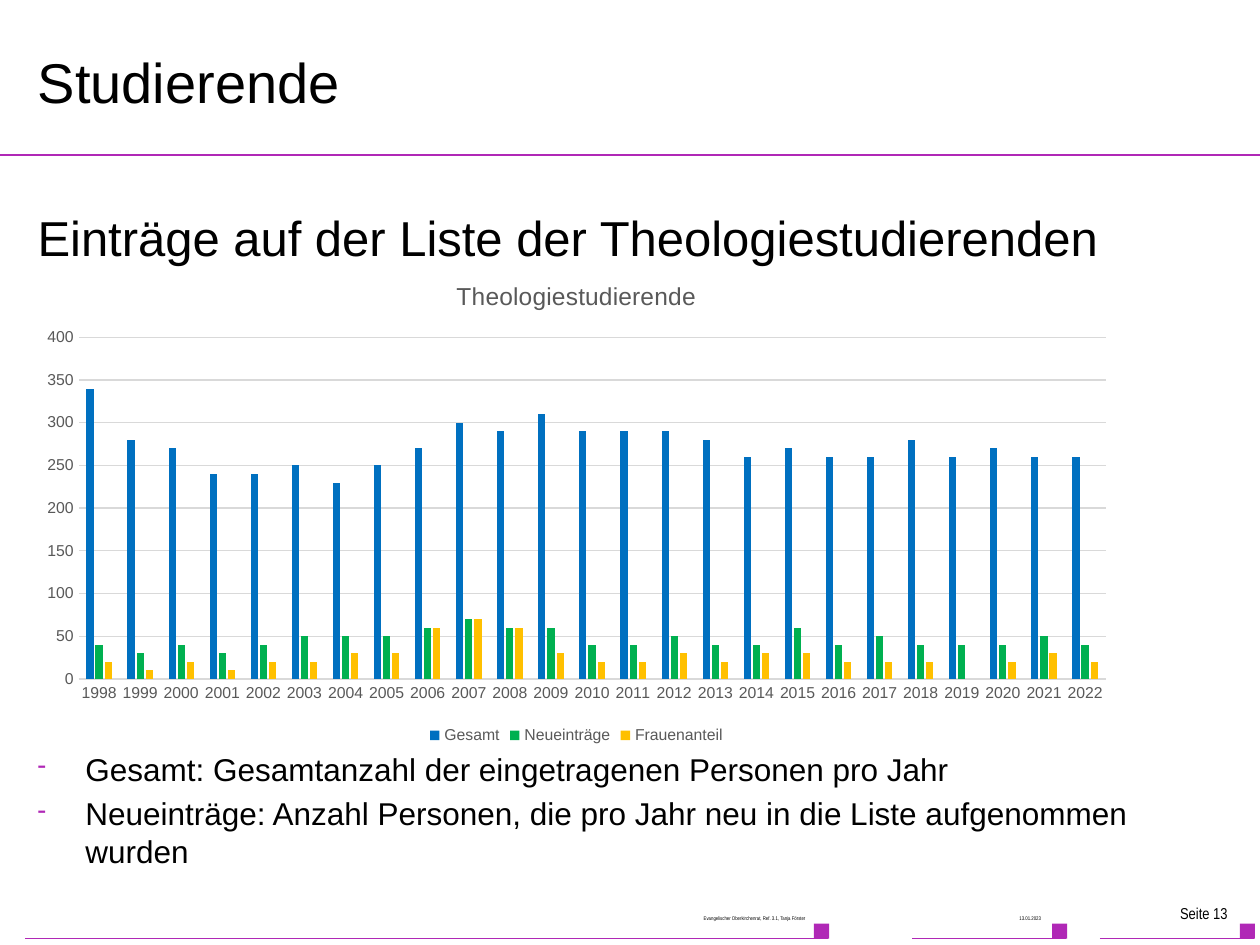
from lxml.etree import SubElement
from pptx import Presentation
from pptx.chart.data import CategoryChartData
from pptx.dml.color import RGBColor
from pptx.enum.chart import XL_CHART_TYPE as ChartType, XL_LEGEND_POSITION as LegendPosition, XL_TICK_MARK as TickMark
from pptx.enum.shapes import MSO_CONNECTOR as Connector, MSO_SHAPE as Shape
from pptx.enum.text import MSO_ANCHOR as Anchor, PP_ALIGN as Align
from pptx.oxml.ns import qn
from pptx.util import Inches, Pt

COLORS = {
    "accent": "B028B6", "text": "000000", "muted": "595959", "grid": "D9D9D9",
    "total": "0070C0", "new": "00B050", "women": "FFC000",
}
YEARS = [str(year) for year in range(1998, 2023)]
SERIES = [
    ("Gesamt", "total", [340, 280, 270, 240, 240, 250, 230, 250, 270, 300, 290, 310, 290,
                         290, 290, 280, 260, 270, 260, 260, 280, 260, 270, 260, 260]),
    ("Neueinträge", "new", [40, 30, 40, 30, 40, 50, 50, 50, 60, 70, 60, 60, 40,
                            40, 50, 40, 40, 60, 40, 50, 40, 40, 40, 50, 40]),
    ("Frauenanteil", "women", [20, 10, 20, 10, 20, 20, 30, 30, 60, 70, 60, 30, 20,
                               20, 30, 20, 30, 30, 20, 20, 20, None, 20, 30, 20]),
]
DEFINITIONS = [
    "Gesamt: Gesamtanzahl der eingetragenen Personen pro Jahr",
    "Neueinträge: Anzahl Personen, die pro Jahr neu in die Liste aufgenommen wurden",
]
FOOTERS = [
    (0.2, 6.57, (0.35, 7.22, 6.14, 0.16), "Evangelischer Oberkirchenrat, Ref. 3.1, Tanja Förster", 3),
    (7.24, 8.46, (6.89, 7.22, 1.47, 0.16), "13.01.2023", 3),
    (8.73, 9.95, (8.62, 7.14, 1.22, 0.24), "Seite 13", 9),
]


def color(name):
    return RGBColor.from_string(COLORS[name])


def inches(area):
    return [Inches(length) for length in area]


class SlideBuilder:
    font = "Arial"
    footer_font = "Arial Narrow"

    def __init__(self, slide):
        self.slide = slide

    def style(self, font, size, name="text", face=None):
        font.name = face or self.font
        font.size = Pt(size)
        font.bold = False
        font.color.rgb = color(name)

    def title(self, area, text):
        title = self.slide.shapes.title
        title.left, title.top, title.width, title.height = inches(area)
        title.text_frame.text = text
        title.text_frame.vertical_anchor = Anchor.MIDDLE
        para = title.text_frame.paragraphs[0]
        para.alignment = Align.LEFT
        self.style(para.font, 32)

    def text(self, area, lines, size, face=None):
        box = self.slide.shapes.add_textbox(*inches(area))
        box.text_frame.word_wrap = True
        box.text_frame.text = "\n".join(lines)
        for para in box.text_frame.paragraphs:
            self.style(para.font, size, face=face)
        return box.text_frame.paragraphs

    def bullets(self, area, lines, size):
        paras = self.text(area, [""] * len(lines), size)
        for index, (para, line) in enumerate(zip(paras, lines)):
            para.text = line
            properties = para._p.get_or_add_pPr()
            properties.set("marL", str(Inches(0.38)))
            properties.set("indent", str(Inches(-0.38)))
            for old in list(properties):
                properties.remove(old)
            tint = SubElement(properties, qn("a:buClr"))
            SubElement(tint, qn("a:srgbClr"), val=COLORS["accent"])
            SubElement(properties, qn("a:buSzPct"), val="80000")
            SubElement(properties, qn("a:buChar"), char="-")
            para.space_before = Pt(4 if index else 0)
            self.style(para.font, size)

    def line(self, left, right, top, width):
        line = self.slide.shapes.add_connector(Connector.STRAIGHT, *inches((left, top, right, top)))
        line.line.color.rgb = color("accent")
        line.line.width = Pt(width)
        SubElement(line._element.spPr, qn("a:effectLst"))

    def square(self, left, top, side):
        square = self.slide.shapes.add_shape(Shape.RECTANGLE, *inches((left, top, side, side)))
        square.shadow.inherit = False
        square.fill.solid()
        square.fill.fore_color.rgb = color("accent")
        square.line.fill.background()

    def footer(self, left, right, area, text, size):
        self.line(left, right, 7.45, 0.75)
        self.square(right - 0.11, 7.33, 0.12)
        para = self.text(area, [text], size, self.footer_font)[0]
        para.alignment = Align.RIGHT
        para.line_spacing = 0.9
        para.space_after = Pt(6)

    def chart(self, area, heading, categories, series):
        data = CategoryChartData()
        data.categories = categories
        for name, _, values in series:
            data.add_series(name, values)
        chart = self.slide.shapes.add_chart(ChartType.COLUMN_CLUSTERED, *inches(area), data).chart
        self.style(chart.font, 10)
        chart.has_title = True
        chart.chart_title.text_frame.text = heading
        self.style(chart.chart_title.text_frame.paragraphs[0].font, 14, "muted")
        chart.chart_title.include_in_layout = False
        chart.has_legend = True
        chart.legend.position = LegendPosition.BOTTOM
        chart.legend.include_in_layout = False
        self.style(chart.legend.font, 9, "muted")
        plot = chart.plots[0]
        plot.gap_width = 219
        plot.overlap = -27
        plot.vary_by_categories = False
        for bars, (_, tint, _) in zip(plot.series, series):
            bars.format.fill.solid()
            bars.format.fill.fore_color.rgb = color(tint)
        years, counts = chart.category_axis, chart.value_axis
        for axis in (years, counts):
            axis.major_tick_mark = axis.minor_tick_mark = TickMark.NONE
            self.style(axis.tick_labels.font, 9, "muted")
        counts.minimum_scale, counts.maximum_scale, counts.major_unit = 0, 400, 50
        counts.format.line.fill.background()
        for rule in (years.format.line, counts.major_gridlines.format.line):
            rule.color.rgb = color("grid")
            rule.width = Pt(0.75)


def main():
    deck = Presentation()
    deck.slide_width, deck.slide_height = Inches(10), Inches(7.5)
    page = SlideBuilder(deck.slides.add_slide(deck.slide_layouts[5]))
    page.line(0, 10, 1.23, 1.5)
    page.title((0.2, 0.21, 7.88, 0.87), "Studierende")
    page.text((0.2, 1.6, 9.37, 0.55), ["Einträge auf der Liste der Theologiestudierenden"], 28)
    page.chart((0.2, 2.06, 8.75, 3.89), "Theologiestudierende", YEARS, SERIES)
    page.bullets((0.2, 5.9, 9.37, 1.08), DEFINITIONS, 18)
    for footer in FOOTERS:
        page.footer(*footer)
    deck.save("out.pptx")


if __name__ == "__main__":
    main()
